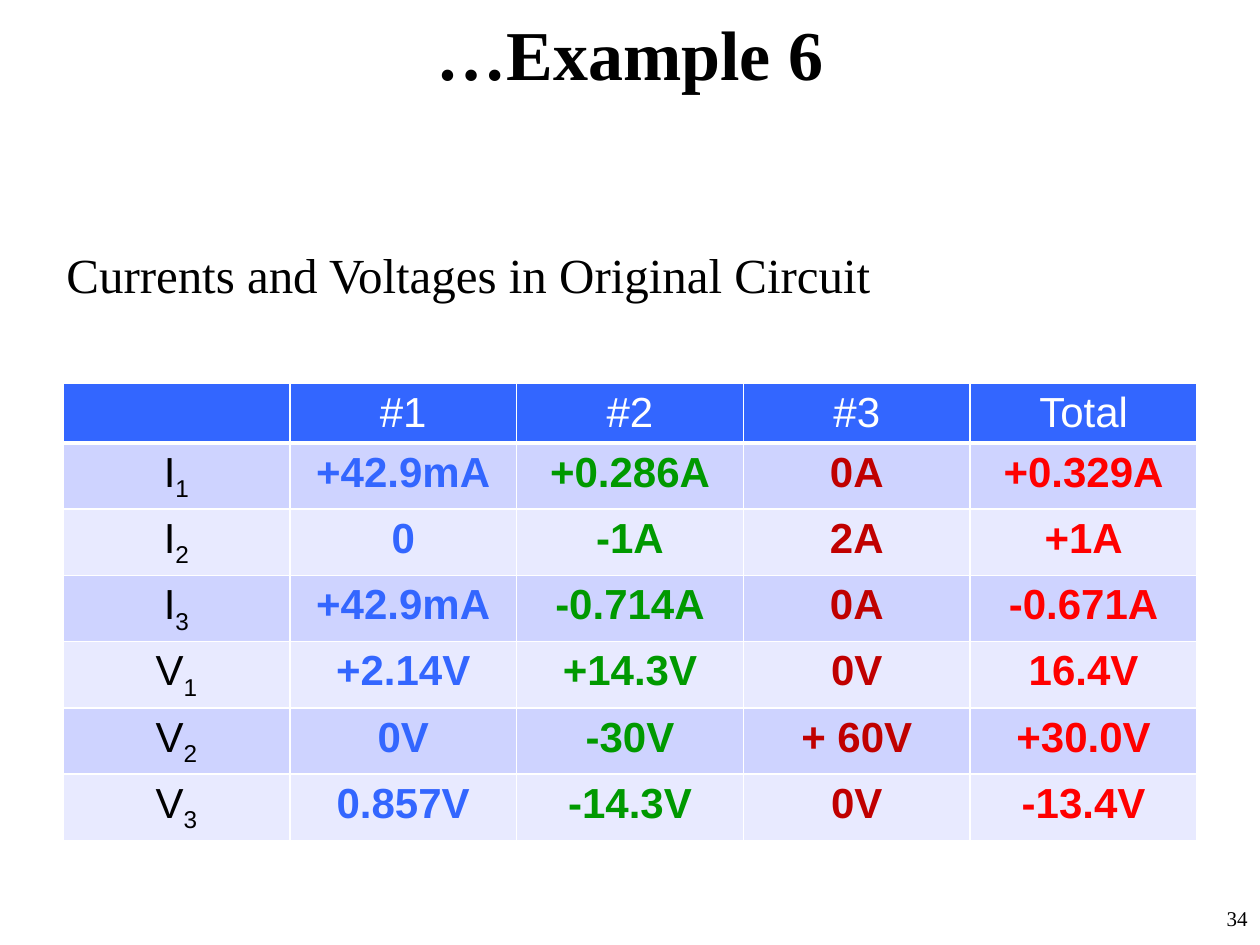
from dataclasses import dataclass

from lxml.etree import SubElement
from pptx import Presentation
from pptx.dml.color import RGBColor
from pptx.enum.text import MSO_ANCHOR as Anchor, PP_ALIGN as Align
from pptx.oxml.ns import qn
from pptx.util import Cm, Pt

BLACK = RGBColor(0x00, 0x00, 0x00)
WHITE = RGBColor(0xFF, 0xFF, 0xFF)
BLUE = RGBColor(0x33, 0x66, 0xFF)
GREEN = RGBColor(0x00, 0x99, 0x00)
DARK_RED = RGBColor(0xC0, 0x00, 0x00)
RED = RGBColor(0xFF, 0x00, 0x00)
BAND_DARK = RGBColor(0xCE, 0xD3, 0xFF)
BAND_LIGHT = RGBColor(0xE8, 0xEA, 0xFF)

SERIF = "Times New Roman"
SANS = "Arial"


@dataclass
class Box:
    left: float
    top: float
    width: float
    height: float

    def lengths(self) -> tuple:
        return Cm(self.left), Cm(self.top), Cm(self.width), Cm(self.height)


@dataclass
class Style:
    size: int
    font: str = SERIF
    color: RGBColor = BLACK
    bold: bool = False


@dataclass
class Quantity:
    symbol: str
    index: str
    values: tuple


HEADERS = ("", "#1", "#2", "#3", "Total")
VALUE_COLORS = (BLUE, GREEN, DARK_RED, RED)
QUANTITIES = (
    Quantity("I", "1", ("+42.9mA", "+0.286A", "0A", "+0.329A")),
    Quantity("I", "2", ("0", "-1A", "2A", "+1A")),
    Quantity("I", "3", ("+42.9mA", "-0.714A", "0A", "-0.671A")),
    Quantity("V", "1", ("+2.14V", "+14.3V", "0V", "16.4V")),
    Quantity("V", "2", ("0V", "-30V", "+ 60V", "+30.0V")),
    Quantity("V", "3", ("0.857V", "-14.3V", "0V", "-13.4V")),
)


def add_run(p, text: str, style: Style, baseline: int = 0) -> None:
    r = p.add_run()
    r.text = text
    r.font.size = Pt(style.size)
    r.font.name = style.font
    r.font.bold = style.bold
    r.font.color.rgb = style.color
    if baseline:
        r.font._element.set("baseline", str(baseline * 1000))


def add_text(s, box: Box, text: str, style: Style, align: Align) -> None:
    tf = s.shapes.add_textbox(*box.lengths()).text_frame
    tf.word_wrap = True
    p = tf.paragraphs[0]
    p.alignment = align
    add_run(p, text, style)


def format_cell(cell, fill: RGBColor, bottom: int = 1) -> None:
    tcPr = cell._tc.get_or_add_tcPr()
    for side, width in (("L", 1), ("R", 1), ("T", 1), ("B", bottom)):
        ln = SubElement(tcPr, qn(f"a:ln{side}"), w=str(Pt(width)))
        SubElement(SubElement(ln, qn("a:solidFill")), qn("a:srgbClr"), val=str(WHITE))
    cell.fill.solid()
    cell.fill.fore_color.rgb = fill
    cell.text_frame.paragraphs[0].alignment = Align.CENTER


def add_results(s, box: Box) -> None:
    rows = len(QUANTITIES) + 1
    table = s.shapes.add_table(rows, len(HEADERS), *box.lengths()).table
    for row in table.rows:
        row.height = Cm(1.04)

    for col, header in enumerate(HEADERS):
        cell = table.cell(0, col)
        format_cell(cell, BLUE, bottom=3)
        if header:
            add_run(cell.text_frame.paragraphs[0], header, Style(24, SANS, WHITE))

    for row, quantity in enumerate(QUANTITIES, 1):
        fill = BAND_DARK if row % 2 else BAND_LIGHT
        cell = table.cell(row, 0)
        format_cell(cell, fill)
        p = cell.text_frame.paragraphs[0]
        add_run(p, quantity.symbol, Style(24, SANS))
        add_run(p, quantity.index, Style(24, SANS), baseline=-25)
        for col, (value, color) in enumerate(zip(quantity.values, VALUE_COLORS), 1):
            cell = table.cell(row, col)
            format_cell(cell, fill)
            add_run(cell.text_frame.paragraphs[0], value, Style(24, SANS, color, True))


def main() -> None:
    prs = Presentation()
    prs.slide_width, prs.slide_height = Cm(25.4), Cm(19.05)
    s = prs.slides.add_slide(prs.slide_layouts[5])

    title = s.shapes.title
    title.left, title.top, title.width, title.height = Box(0, 0, 25.4, 2.13).lengths()
    tf = title.text_frame
    tf.vertical_anchor = Anchor.MIDDLE
    p = tf.paragraphs[0]
    p.alignment = Align.CENTER
    add_run(p, "…Example 6", Style(40, bold=True))

    add_results(s, Box(1.27, 7.73, 22.86, 7.28))
    add_text(s, Box(20.12, 18.14, 5.28, 0.91), "34", Style(12), Align.RIGHT)
    add_text(s, Box(1.09, 4.8, 22.66, 1.45),
             "Currents and Voltages in Original Circuit", Style(28), Align.LEFT)
    prs.save("out.pptx")


if __name__ == "__main__":
    main()
